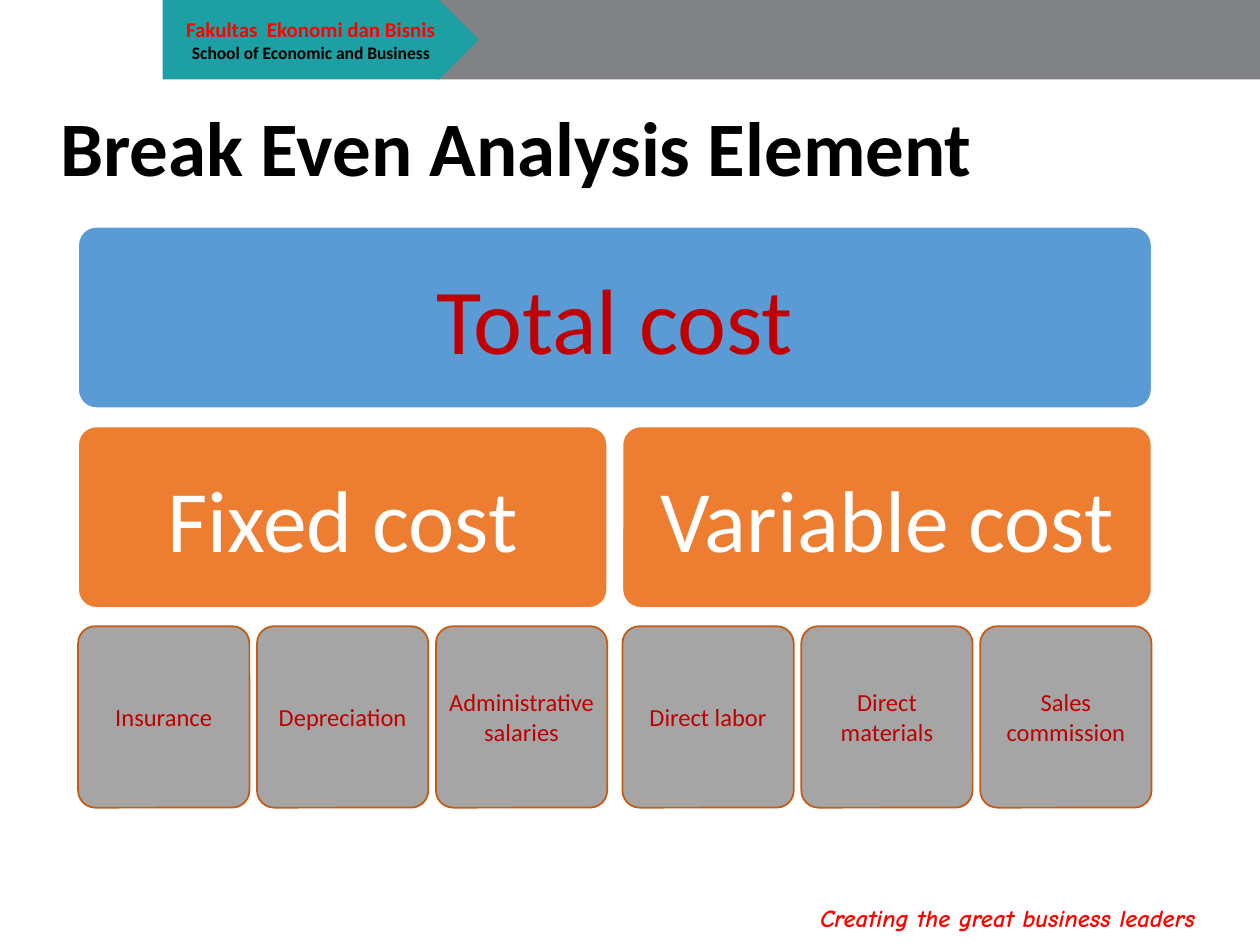
from dataclasses import dataclass

from pptx import Presentation
from pptx.dml.color import RGBColor
from pptx.enum.shapes import MSO_SHAPE
from pptx.enum.text import MSO_ANCHOR, MSO_AUTO_SIZE, PP_ALIGN
from pptx.util import Inches, Pt


@dataclass(frozen=True)
class Theme:
    font: str = "Calibri"
    script_font: str = "Comic Neue"
    gray: str = "808285"
    teal: str = "1DA0A3"
    blue: str = "5B9BD5"
    orange: str = "ED7D31"
    silver: str = "A5A5A5"
    rust: str = "C55A11"
    crimson: str = "C00000"
    red: str = "FF0000"
    black: str = "000000"
    white: str = "FFFFFF"
    title_size: int = 44
    total_size: int = 53
    group_size: int = 50
    item_size: int = 14
    faculty_size: int = 12
    school_size: int = 10
    motto_size: int = 14


THEME = Theme()
LEFT, TOP = 0.62, 1.8
ROW_STEP, CARD_H = 1.585, 1.44
TOTAL_W, GROUP_W, ITEM_W = 8.52, 4.2, 1.36
GROUP_STEP, ITEM_STEP = 4.32, 1.42
COSTS = {
    "Fixed cost": ["Insurance", "Depreciation", "Administrative salaries"],
    "Variable cost": ["Direct labor", "Direct materials", "Sales commission"],
}


def add_run(p, text, size, color, bold=False, italic=False, font=THEME.font):
    r = p.add_run()
    r.text = text
    r.font.name = font
    r.font.size = Pt(size)
    r.font.bold = bold
    r.font.italic = italic
    r.font.color.rgb = RGBColor.from_string(color)


def add_block(s, kind, x, y, w, h, fill, line=None):
    sp = s.shapes.add_shape(kind, Inches(x), Inches(y), Inches(w), Inches(h))
    sp.shadow.inherit = False
    sp.fill.solid()
    sp.fill.fore_color.rgb = RGBColor.from_string(fill)
    if line:
        sp.line.color.rgb = RGBColor.from_string(line)
        sp.line.width = Pt(1)
    else:
        sp.line.fill.background()
    return sp


def add_card(s, text, x, row, w, fill, line, size, color, inset):
    y = TOP + row * ROW_STEP
    sp = add_block(s, MSO_SHAPE.ROUNDED_RECTANGLE, x, y, w, CARD_H, fill, line)
    sp.adjustments[0] = 0.1
    tf = sp.text_frame
    tf.word_wrap = True
    tf.vertical_anchor = MSO_ANCHOR.MIDDLE
    tf.margin_left = tf.margin_right = Inches(inset)
    tf.margin_top = tf.margin_bottom = Inches(inset)
    p = tf.paragraphs[0]
    p.alignment = PP_ALIGN.CENTER
    add_run(p, text, size, color)


def add_text_box(s, x, y, w, h):
    sp = s.shapes.add_textbox(Inches(x), Inches(y), Inches(w), Inches(h))
    return sp.text_frame


def add_header(s):
    add_block(s, MSO_SHAPE.RECTANGLE, 3.47, 0, 6.53, 0.63, THEME.gray)
    sp = add_block(s, MSO_SHAPE.PENTAGON, 1.29, 0, 2.51, 0.63, THEME.teal)
    tf = sp.text_frame
    tf.word_wrap = True
    tf.vertical_anchor = MSO_ANCHOR.MIDDLE
    lines = [
        ("Fakultas  Ekonomi dan Bisnis", THEME.faculty_size, THEME.red),
        ("School of Economic and Business", THEME.school_size, THEME.black),
    ]
    for i, (text, size, color) in enumerate(lines):
        p = tf.add_paragraph() if i else tf.paragraphs[0]
        p.alignment = PP_ALIGN.CENTER
        add_run(p, text, size, color, bold=True)


def add_motto(s):
    tf = add_text_box(s, 6.41, 7.12, 3.59, 0.34)
    tf.word_wrap = False
    tf.auto_size = MSO_AUTO_SIZE.SHAPE_TO_FIT_TEXT
    add_run(tf.paragraphs[0], "Creating the great business leaders",
            THEME.motto_size, THEME.red, True, True, THEME.script_font)


def add_title(s):
    tf = add_text_box(s, 0.38, 0.58, 9, 1.25)
    tf.word_wrap = True
    tf.vertical_anchor = MSO_ANCHOR.MIDDLE
    p = tf.paragraphs[0]
    p.line_spacing = 0.9
    add_run(p, "Break Even Analysis Element", THEME.title_size, THEME.black, True)


def add_hierarchy(s):
    add_card(s, "Total cost", LEFT, 0, TOTAL_W, THEME.blue, THEME.white,
             THEME.total_size, THEME.crimson, 0.2)
    for i, (group, items) in enumerate(COSTS.items()):
        x = LEFT + i * GROUP_STEP
        add_card(s, group, x, 1, GROUP_W, THEME.orange, THEME.white,
                 THEME.group_size, THEME.white, 0.2)
        for j, item in enumerate(items):
            add_card(s, item, x + j * ITEM_STEP, 2, ITEM_W, THEME.silver,
                     THEME.rust, THEME.item_size, THEME.crimson, 0.02)


def main():
    prs = Presentation()
    prs.slide_width = Inches(10)
    prs.slide_height = Inches(7.5)
    s = prs.slides.add_slide(prs.slide_layouts[6])
    add_header(s)
    add_motto(s)
    add_title(s)
    add_hierarchy(s)
    prs.save("out.pptx")


if __name__ == "__main__":
    main()
